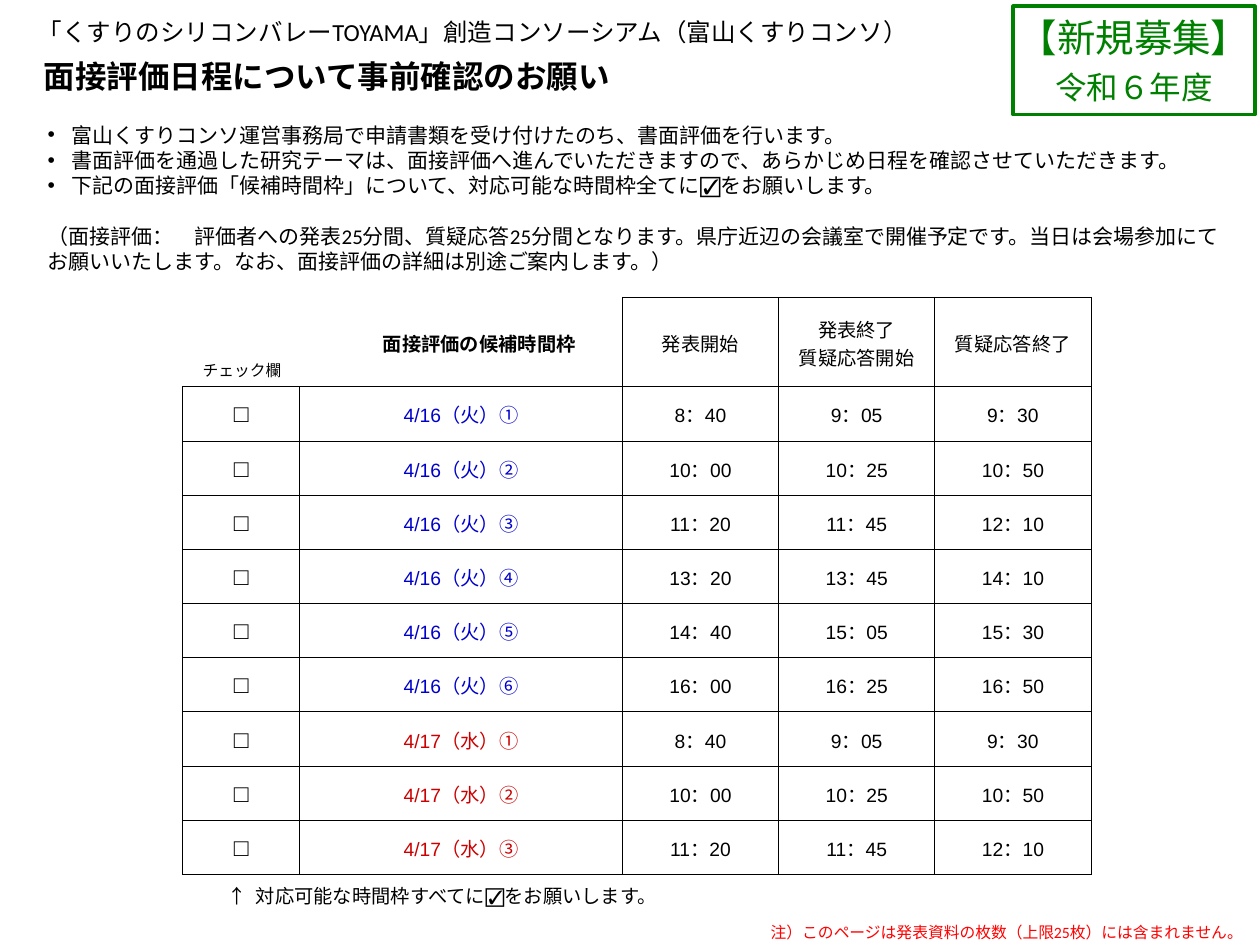
from lxml.etree import SubElement
from pptx import Presentation
from pptx.dml.color import RGBColor
from pptx.enum.shapes import MSO_SHAPE
from pptx.enum.text import MSO_ANCHOR, PP_ALIGN
from pptx.oxml.ns import qn
from pptx.util import Inches, Pt

COLORS = {
    "text": "000000",
    "tuesday": "0000CC",
    "wednesday": "CC0000",
    "badge": "008000",
    "note": "FF0000",
}
BODY_FONT = "Calibri"
TABLE_FONT = "Arial"

START_TIMES = ["8：40", "10：00", "11：20", "13：20", "14：40", "16：00"]
DAYS = [("4/16（火）", "tuesday", 6), ("4/17（水）", "wednesday", 3)]
SLOT_NUMBERS = "①②③④⑤⑥"
STAGE_MINUTES = 25


def later(time, minutes):
    hour, minute = map(int, time.split("："))
    total = hour * 60 + minute + minutes
    return f"{total // 60}：{total % 60:02d}"


class SlideBuilder:
    def __init__(self, slide):
        self.slide = slide

    def style(self, paragraph, text, size, color="text", font=BODY_FONT,
              bold=False, align=PP_ALIGN.LEFT):
        paragraph.text = text
        paragraph.alignment = align
        paragraph.font.size = Pt(size)
        paragraph.font.name = font
        paragraph.font.bold = bold
        paragraph.font.color.rgb = RGBColor.from_string(COLORS[color])
        return paragraph

    def indent(self, paragraph, left, first, bullet=None):
        properties = paragraph._p.get_or_add_pPr()
        properties.set("marL", str(Inches(left)))
        properties.set("indent", str(Inches(first)))
        if bullet:
            SubElement(properties, qn("a:buFont"), typeface="Arial")
            SubElement(properties, qn("a:buChar"), char=bullet)

    def text_box(self, left, top, width, height, anchor=MSO_ANCHOR.TOP):
        shape = self.slide.shapes.add_textbox(
            Inches(left), Inches(top), Inches(width), Inches(height))
        frame = shape.text_frame
        frame.word_wrap = True
        frame.vertical_anchor = anchor
        return frame

    def badge(self, left, top, width, height):
        shape = self.slide.shapes.add_shape(
            MSO_SHAPE.RECTANGLE, Inches(left), Inches(top), Inches(width), Inches(height))
        shape.shadow.inherit = False
        shape.fill.background()
        shape.line.color.rgb = RGBColor.from_string(COLORS["badge"])
        shape.line.width = Pt(2)
        frame = shape.text_frame
        frame.word_wrap = True
        frame.vertical_anchor = MSO_ANCHOR.MIDDLE
        frame.margin_left = frame.margin_right = Inches(0.03)
        frame.margin_top = frame.margin_bottom = Inches(0.05)
        return frame

    def table(self, left, top, column_widths, row_heights):
        frame = self.slide.shapes.add_table(
            len(row_heights), len(column_widths), Inches(left), Inches(top),
            Inches(sum(column_widths)), Inches(sum(row_heights)))
        table = frame.table
        table.first_row = table.horz_banding = False
        for column, width in zip(table.columns, column_widths):
            column.width = Inches(width)
        for row, height in zip(table.rows, row_heights):
            row.height = Inches(height)
        return table

    def cell(self, cell, text="", size=11, color="text", bold=False, sides="LRTB"):
        """Fill one cell; only the named sides get a visible border."""
        cell.vertical_anchor = MSO_ANCHOR.MIDDLE
        cell.margin_left = cell.margin_right = cell.margin_top = Inches(0.01)
        cell.margin_bottom = 0
        cell.text = text
        for paragraph in cell.text_frame.paragraphs:
            self.style(paragraph, paragraph.text, size, color, TABLE_FONT, bold,
                       PP_ALIGN.CENTER)
        properties = cell._tc.get_or_add_tcPr()
        for side in "LRTB":
            line = SubElement(properties, qn(f"a:ln{side}"), w=str(Pt(0.5)))
            if side in sides:
                fill = SubElement(line, qn("a:solidFill"))
                SubElement(fill, qn("a:srgbClr"), val=COLORS["text"])
            else:
                SubElement(line, qn("a:noFill"))
        cell.fill.background()


def add_heading(builder):
    frame = builder.text_box(0.2, 0.05, 7.95, 0.78, MSO_ANCHOR.MIDDLE)
    consortium = builder.style(
        frame.paragraphs[0],
        "「くすりのシリコンバレーTOYAMA」創造コンソーシアム（富山くすりコンソ）", 14)
    consortium.space_after = Pt(6)
    title = builder.style(frame.add_paragraph(),
                          "面接評価日程について事前確認のお願い", 18, bold=True)
    builder.indent(title, 0.05, 0)


def add_instructions(builder):
    frame = builder.text_box(0.28, 0.92, 9.53, 1.31)
    bullets = [
        "富山くすりコンソ運営事務局で申請書類を受け付けたのち、書面評価を行います。",
        "書面評価を通過した研究テーマは、面接評価へ進んでいただきますので、あらかじめ日程を確認させていただきます。",
        "下記の面接評価「候補時間枠」について、対応可能な時間枠全てに☑をお願いします。",
    ]
    for index, text in enumerate(bullets):
        paragraph = frame.add_paragraph() if index else frame.paragraphs[0]
        builder.style(paragraph, text, 12)
        builder.indent(paragraph, 0.19, -0.19, "•")
    details = builder.style(
        frame.add_paragraph(),
        "（面接評価：　評価者への発表25分間、質疑応答25分間となります。県庁近辺の会議室で開催予定です。"
        "当日は会場参加にてお願いいたします。なお、面接評価の詳細は別途ご案内します。）", 12)
    details.space_before = Pt(14.5)


def add_schedule(builder):
    slots = [(day + SLOT_NUMBERS[index], color, START_TIMES[index])
             for day, color, count in DAYS for index in range(count)]
    table = builder.table(1.45, 2.36, [0.93, 2.56] + [1.24] * 3,
                          [0.71] + [0.43] * len(slots))

    heading = table.cell(0, 0)
    heading.merge(table.cell(0, 1))
    builder.cell(heading, "面接評価の候補時間枠", bold=True, sides="RB")
    heading.margin_left = Inches(1.23)
    builder.cell(table.cell(0, 1), sides="RB")
    for column, text in enumerate(["発表開始", "発表終了\n質疑応答開始", "質疑応答終了"], 2):
        builder.cell(table.cell(0, column), text)

    for row, (label, color, start) in enumerate(slots, 1):
        builder.cell(table.cell(row, 0), "□", size=14)
        builder.cell(table.cell(row, 1), label, color=color)
        for stage in range(3):
            builder.cell(table.cell(row, 2 + stage), later(start, stage * STAGE_MINUTES))


def add_captions(builder):
    reminder = builder.text_box(1.71, 6.97, 3.78, 0.29)
    builder.style(reminder.paragraphs[0], "↑  対応可能な時間枠すべてに☑をお願いします。", 11)
    check_label = builder.text_box(1.41, 2.81, 1.02, 0.25)
    builder.style(check_label.paragraphs[0], "チェック欄", 9, align=PP_ALIGN.CENTER)


def add_badge(builder):
    frame = builder.badge(8.04, 0.05, 1.92, 0.86)
    kind = builder.style(frame.paragraphs[0], "【新規募集】", 22, "badge", TABLE_FONT,
                         align=PP_ALIGN.CENTER)
    year = builder.style(frame.add_paragraph(), "令和６年度", 18, "badge", TABLE_FONT,
                         align=PP_ALIGN.CENTER)
    kind.line_spacing = year.line_spacing = Pt(26)


def add_note(builder):
    frame = builder.text_box(5.87, 7.27, 4.09, 0.2, MSO_ANCHOR.BOTTOM)
    frame.margin_bottom = 0
    builder.style(frame.paragraphs[0],
                  "注）このページは発表資料の枚数（上限25枚）には含まれません。",
                  9, "note", align=PP_ALIGN.RIGHT)


def main():
    presentation = Presentation()
    presentation.slide_width = Inches(10)
    presentation.slide_height = Inches(7.5)
    builder = SlideBuilder(presentation.slides.add_slide(presentation.slide_layouts[6]))
    add_heading(builder)
    add_instructions(builder)
    add_schedule(builder)
    add_captions(builder)
    add_badge(builder)
    add_note(builder)
    presentation.save("out.pptx")


if __name__ == "__main__":
    main()
